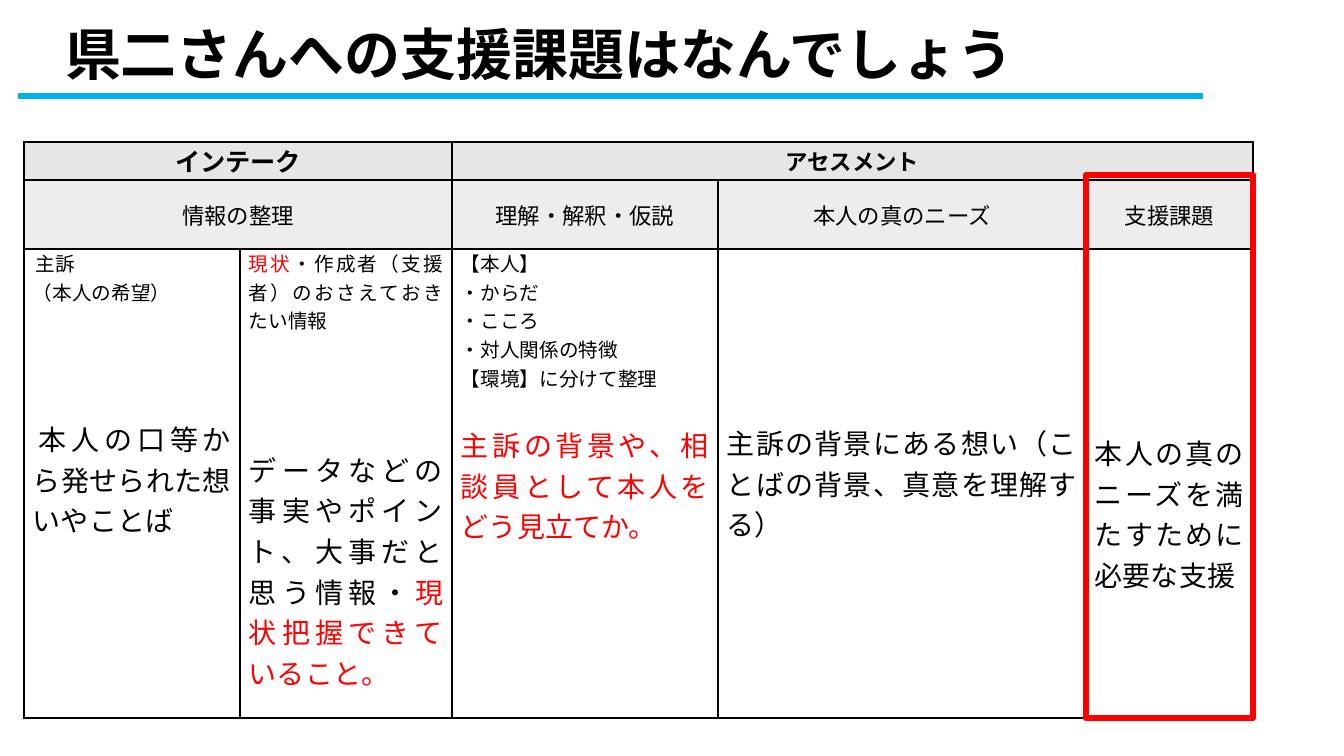
from lxml.etree import SubElement
from pptx import Presentation
from pptx.dml.color import RGBColor
from pptx.enum.lang import MSO_LANGUAGE_ID as Lang
from pptx.enum.shapes import MSO_CONNECTOR as Line, MSO_SHAPE as Shape
from pptx.enum.text import MSO_ANCHOR as Anchor, PP_ALIGN as Align
from pptx.oxml.ns import qn
from pptx.util import Pt

PX = 914400 / 100.8
FONT = "Noto Sans CJK JP"
BLACK = RGBColor(0x00, 0x00, 0x00)
RED = RGBColor(0xFF, 0x00, 0x00)
BLUE = RGBColor(0x00, 0xB0, 0xF0)
GREY = RGBColor(0xE7, 0xE6, 0xE6)
PALE = RGBColor(0xED, 0xED, 0xED)

TITLE = "県二さんへの支援課題はなんでしょう"
COLS = [216, 212, 266, 368, 167]
ROWS = [38, 69, 469]
LEFT, TOP = 24, 142

# Heads: row, first column, last column, text, size, bold, fill
HEADS = [
    (0, 0, 1, "インテーク", 18, True, GREY),
    (0, 2, 4, "アセスメント", 16, True, GREY),
    (1, 0, 1, "情報の整理", 16, False, PALE),
    (1, 2, 2, "理解・解釈・仮説", 16, False, PALE),
    (1, 3, 3, "本人の真のニーズ", 16, False, PALE),
    (1, 4, 4, "支援課題", 16, False, PALE),
]

# Body cells: top margin, then paragraphs of
# (space before, first-line indent, size, [(text, colour), ...])
BODY = [
    (0, [
        (0, 3, 14, [("主訴", BLACK)]),
        (0, 0, 14, [("（本人の希望）", BLACK)]),
        (112, 6, 20, [("本人の口等から発せられた想いやことば", BLACK)]),
    ]),
    (0, [
        (0, 0, 14, [("現状", RED),
                    ("・作成者（支援者）のおさえておきたい情報", BLACK)]),
        (114, 0, 20, [("データなどの事実やポイント、大事だと思う情報・", BLACK),
                      ("現状把握できていること。", RED)]),
    ]),
    (0, [
        (0, 0, 14, [("【本人】", BLACK)]),
        (0, 0, 14, [("・からだ", BLACK)]),
        (0, 0, 14, [("・こころ", BLACK)]),
        (0, 0, 14, [("・対人関係の特徴", BLACK)]),
        (0, 0, 14, [("【環境】に分けて整理", BLACK)]),
        (32, 0, 20, [("主訴の背景や、相談員として本人をどう見立てか。", RED)]),
    ]),
    (173, [(0, 0, 20, [
        ("主訴の背景にある想い（ことばの背景、真意を理解する）", BLACK)])]),
    (183, [(0, 0, 20, [
        ("本人の真のニーズを満たすために必要な支援", BLACK)])]),
]


def px(n):
    return round(n * PX)


def add_run(para, text, size, color=BLACK, bold=False):
    run = para.add_run()
    run.text = text
    font = run.font
    font.name, font.size, font.bold = FONT, Pt(size), bold
    font.color.rgb = color
    font.language_id = Lang.JAPANESE
    SubElement(run._r.get_or_add_rPr(), qn("a:ea"), typeface=FONT)


def set_edges(cell, **widths):
    """Draw black cell borders, given in points by side: L, R, T, B."""
    props = cell._tc.get_or_add_tcPr()
    for side, width in widths.items():
        edge = SubElement(props, qn("a:ln" + side), w=str(Pt(width)))
        fill = SubElement(edge, qn("a:solidFill"))
        SubElement(fill, qn("a:srgbClr"), val=str(BLACK))


def add_title(slide):
    title = slide.shapes.title
    title.left, title.top, title.width, title.height = 0, 0, px(1207), px(115)
    frame = title.text_frame
    frame.vertical_anchor = Anchor.MIDDLE
    frame.margin_left = px(65)
    para = frame.paragraphs[0]
    para.alignment, para.line_spacing = Align.LEFT, 0.9
    add_run(para, TITLE, 40, bold=True)

    rule = slide.shapes.add_connector(
        Line.STRAIGHT, px(18), px(96), px(1203), px(96))
    rule.line.color.rgb, rule.line.width = BLUE, Pt(4.5)
    SubElement(rule._element.spPr, qn("a:effectLst"))


def add_grid(slide):
    grid = slide.shapes.add_table(
        len(ROWS), len(COLS), px(LEFT), px(TOP),
        px(sum(COLS)), px(sum(ROWS))).table
    grid.first_row = grid.horz_banding = False
    for col, width in zip(grid.columns, COLS):
        col.width = px(width)
    for r, height in enumerate(ROWS):
        grid.rows[r].height = px(height)
        for cell in grid.rows[r].cells:
            set_edges(cell, L=1, R=1, T=2 if r == 1 else 1,
                      B=2 if r == 0 else 1)
            cell.fill.background()
            cell.margin_left = cell.margin_right = px(9)
            cell.margin_top = cell.margin_bottom = 0

    for row, first, last, text, size, bold, fill in HEADS:
        cell = grid.cell(row, first)
        if last > first:
            cell.merge(grid.cell(row, last))
        cell.fill.solid()
        cell.fill.fore_color.rgb = fill
        cell.vertical_anchor = Anchor.MIDDLE
        para = cell.text_frame.paragraphs[0]
        para.alignment = Align.CENTER
        add_run(para, text, size, bold=bold)

    for c, (top, paras) in enumerate(BODY):
        cell = grid.cell(2, c)
        cell.margin_top = px(top)
        frame = cell.text_frame
        for i, (gap, indent, size, runs) in enumerate(paras):
            para = frame.add_paragraph() if i else frame.paragraphs[0]
            para.alignment, para.space_before = Align.JUSTIFY, px(gap)
            para._p.get_or_add_pPr().set("indent", str(px(indent)))
            for text, color in runs:
                add_run(para, text, size, color)


def add_frame(slide):
    box = slide.shapes.add_shape(
        Shape.RECTANGLE, px(1086), px(175), px(167), px(543))
    box.shadow.inherit = False
    box.fill.background()
    box.line.color.rgb, box.line.width = RED, Pt(4.5)


def main():
    deck = Presentation()
    deck.slide_width, deck.slide_height = px(1344), px(756)
    slide = deck.slides.add_slide(deck.slide_layouts[5])
    add_title(slide)
    add_grid(slide)
    add_frame(slide)
    deck.save("out.pptx")


if __name__ == "__main__":
    main()
